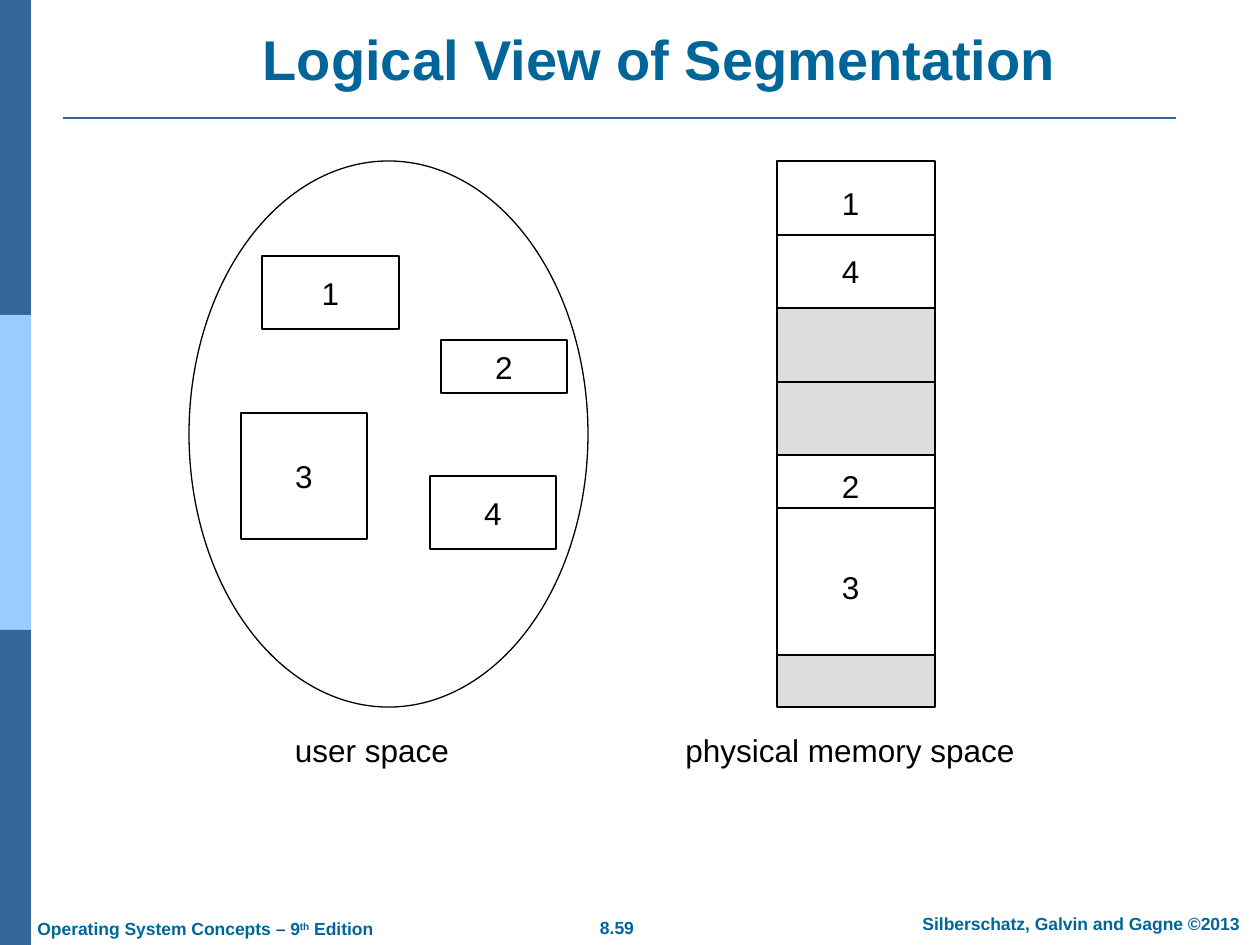
import pptx
import pptx.dml.color
import pptx.enum.shapes
import pptx.enum.text
import pptx.oxml.ns
import pptx.util
from lxml import etree

PX = 914400 / 126
FONT = "Arial"
BLACK, WHITE, GRAY = "000000", "FFFFFF", "DDDDDD"
NAVY, SKY, TEAL = "336699", "99CCFF", "006699"
SHAPE = pptx.enum.shapes.MSO_SHAPE
ALIGN = pptx.enum.text.PP_ALIGN
ANCHOR = pptx.enum.text.MSO_ANCHOR


def px(n):
    return pptx.util.Emu(round(n * PX))


def color(hex_string):
    return pptx.dml.color.RGBColor.from_string(hex_string)


def write(sp, runs, size, ink, bold=False, align=ALIGN.CENTER,
          anchor=ANCHOR.MIDDLE, wrap=False):
    """Fill a shape with one paragraph of (text, is superscript) runs."""
    tf = sp.text_frame
    tf.word_wrap = wrap
    tf.vertical_anchor = anchor
    p = tf.paragraphs[0]
    p.alignment = align
    p.font.name = FONT
    p.font.size = pptx.util.Pt(size)
    p.font.bold = bold
    p.font.color.rgb = color(ink)
    for text, raised in runs:
        r = p.add_run()
        r.text = text
        if raised:
            r._r.get_or_add_rPr().set("baseline", "30000")


def add_text(shapes, box, runs, size=18, ink=BLACK, **style):
    sp = shapes.add_textbox(*map(px, box))
    write(sp, runs, size, ink, **style)


def add_block(shapes, kind, box, fill, line=None, label=None):
    sp = shapes.add_shape(kind, *map(px, box))
    sp.shadow.inherit = False
    sp.fill.solid()
    sp.fill.fore_color.rgb = color(fill)
    if line:
        sp.line.color.rgb = color(line)
        sp.line.width = pptx.util.Pt(0.75)
    else:
        sp.line.fill.background()
    if label:
        write(sp, [(label, False)], 18, BLACK)


def add_rule(shapes, left, right, y, ink=BLACK, width=0.75):
    s = shapes.add_connector(pptx.enum.shapes.MSO_CONNECTOR.STRAIGHT,
                             px(left), px(y), px(right), px(y))
    s.line.color.rgb = color(ink)
    s.line.width = pptx.util.Pt(width)
    etree.SubElement(s._element.spPr, pptx.oxml.ns.qn("a:effectLst"))


def add_frame(shapes):
    """Side bars, title with its rule, and footer."""
    for i, fill in enumerate((NAVY, SKY, NAVY)):
        add_block(shapes, SHAPE.RECTANGLE, (0, 315 * i, 31, 315), fill)
    add_rule(shapes, 63, 1176, 118, NAVY, 1.5)
    add_text(shapes, (122, 19, 1075, 79),
             [("Logical View of Segmentation", False)],
             32, TEAL, bold=True, anchor=ANCHOR.BOTTOM, wrap=True)
    footer = {"size": 10, "ink": TEAL, "bold": True, "anchor": ANCHOR.TOP}
    add_text(shapes, (586, 911, 62, 34), [("8.59", False)], **footer)
    add_text(shapes, (894, 907, 374, 34),
             [("Silberschatz, Galvin and Gagne ©2013", False)],
             wrap=True, **footer)
    add_text(shapes, (25, 912, 364, 34),
             [("Operating System Concepts – 9", False), ("th", True),
              (" Edition", False)], align=ALIGN.LEFT, **footer)


def add_user_space(shapes):
    add_block(shapes, SHAPE.OVAL, (189, 161, 399, 546), WHITE, BLACK)
    segments = {"1": (262, 256, 137, 73), "2": (441, 340, 126, 53),
                "3": (241, 413, 126, 126), "4": (430, 476, 126, 73)}
    for label, box in segments.items():
        add_block(shapes, SHAPE.RECTANGLE, box, WHITE, BLACK, label)
    add_text(shapes, (277, 725, 190, 50), [("user space", False)])


def add_memory(shapes):
    left, width = 777, 158
    group = shapes.add_group_shape().shapes
    edges = (161, 308, 455, 655, 707)
    fills = (WHITE, GRAY, WHITE, GRAY)
    for top, bottom, fill in zip(edges, edges[1:], fills):
        add_block(group, SHAPE.RECTANGLE, (left, top, width, bottom - top),
                  fill, BLACK)
    for y in (235, 382, 508):
        add_rule(group, left, left + width, y)
    for label, top in (("1", 178), ("4", 246), ("2", 461), ("3", 562)):
        add_text(group, (829, top, 43, 50), [(label, False)])
    add_text(shapes, (671, 725, 358, 50), [("physical memory space", False)])


def main():
    prs = pptx.Presentation()
    prs.slide_width, prs.slide_height = px(1260), px(945)
    shapes = prs.slides.add_slide(prs.slide_layouts[6]).shapes
    add_frame(shapes)
    add_user_space(shapes)
    add_memory(shapes)
    prs.save("out.pptx")


if __name__ == "__main__":
    main()
